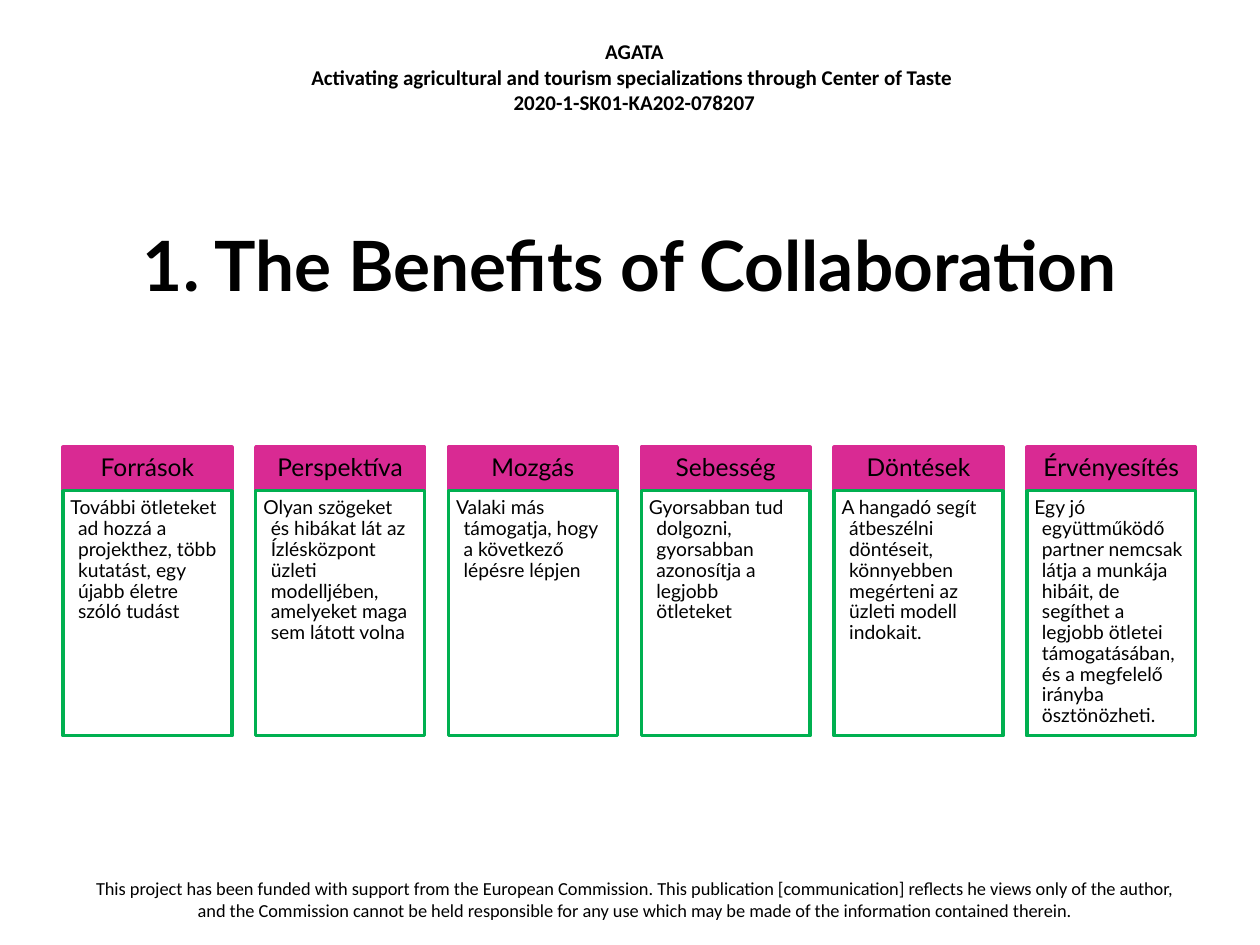
import pptx
import pptx.util
from dataclasses import dataclass
from pptx.dml.color import RGBColor
from pptx.enum.shapes import MSO_SHAPE
from pptx.enum.text import MSO_ANCHOR, PP_ALIGN
from pptx.util import Inches


@dataclass(frozen=True)
class Theme:
    text: RGBColor = RGBColor(0, 0, 0)
    accent: RGBColor = RGBColor(0xD9, 0x2A, 0x93)
    outline: RGBColor = RGBColor(0x00, 0xB0, 0x50)
    line_width: float = 2
    main_font: str = "Lato"
    frame_font: str = "Calibri"
    title_size: float = 39.6
    heading_size: float = 14
    body_size: float = 11
    header_size: float = 12
    footer_size: float = 10.5


THEME = Theme()

HEADER_LINES = [
    "AGATA",
    "Activating agricultural and tourism specializations through Center of Taste ",
    "2020-1-SK01-KA202-078207",
]
TITLE = "1. The Benefits of Collaboration"
FOOTER = (
    "This project has been funded with support from the European Commission. "
    "This publication [communication] reflects he views only of the author, "
    "and the Commission cannot be held responsible for any use which may be made "
    "of the information contained therein."
)
BENEFITS = [
    ("Források", "További ötleteket ad hozzá a projekthez, több kutatást, "
                 "egy újabb életre szóló tudást"),
    ("Perspektíva", "Olyan szögeket és hibákat lát az Ízlésközpont üzleti "
                    "modelljében, amelyeket maga sem látott volna"),
    ("Mozgás", "Valaki más támogatja, hogy a következő lépésre lépjen"),
    ("Sebesség", "Gyorsabban tud dolgozni, gyorsabban azonosítja a legjobb ötleteket"),
    ("Döntések", "A hangadó segít átbeszélni döntéseit, könnyebben megérteni "
                 "az üzleti modell indokait."),
    ("Érvényesítés", "Egy jó együttműködő partner nemcsak látja a munkája hibáit, "
                     "de segíthet a legjobb ötletei támogatásában, és a megfelelő "
                     "irányba ösztönözheti."),
]


def apply(target, formats):
    for name, value in formats.items():
        setattr(target, name, value)


def write(shape, lines, font, frame=None, paragraph_format=None):
    """Fill a shape with one paragraph per line."""
    text_frame = shape.text_frame
    apply(text_frame, {"word_wrap": True, **(frame or {})})
    for index, line in enumerate(lines):
        paragraph = text_frame.paragraphs[0] if index == 0 else text_frame.add_paragraph()
        apply(paragraph, {"alignment": PP_ALIGN.CENTER, **(paragraph_format or {})})
        run = paragraph.add_run()
        run.text = line
        apply(run.font, {**font, "size": pptx.util.Pt(font["size"])})
        run.font.color.rgb = THEME.text
    return text_frame


def add_text(slide, box, lines, font, frame=None):
    text_box = slide.shapes.add_textbox(*map(Inches, box))
    write(text_box, lines, font, frame)


def add_panel(slide, box, line_color, fill_color=None):
    panel = slide.shapes.add_shape(MSO_SHAPE.RECTANGLE, *map(Inches, box))
    panel.shadow.inherit = False
    if fill_color is None:
        panel.fill.background()
    else:
        panel.fill.solid()
        panel.fill.fore_color.rgb = fill_color
    panel.line.color.rgb = line_color
    panel.line.width = pptx.util.Pt(THEME.line_width)
    return panel


def margins(left, top, right, bottom):
    return {
        "margin_left": Inches(left),
        "margin_top": Inches(top),
        "margin_right": Inches(right),
        "margin_bottom": Inches(bottom),
    }


def add_benefit(slide, box, heading, body):
    """A filled heading above an outlined body."""
    left, top, width, height = box
    heading_height = 0.345

    heading_panel = add_panel(
        slide, (left, top, width, heading_height), THEME.accent, THEME.accent)
    write(heading_panel, [heading],
          {"name": THEME.main_font, "size": THEME.heading_size},
          {"vertical_anchor": MSO_ANCHOR.MIDDLE, **margins(0.11, 0.06, 0.11, 0.06)},
          {"line_spacing": 0.9})

    body_panel = add_panel(
        slide, (left, top + heading_height, width, height - heading_height), THEME.outline)
    text_frame = write(
        body_panel, [body],
        {"name": THEME.main_font, "size": THEME.body_size},
        {"vertical_anchor": MSO_ANCHOR.TOP, **margins(0.06, 0.06, 0.09, 0.1)},
        {"alignment": PP_ALIGN.LEFT, "line_spacing": 0.9, "level": 1})
    # Hanging indent
    properties = text_frame.paragraphs[0]._p.get_or_add_pPr()
    properties.set("marL", str(Inches(0.06)))
    properties.set("indent", str(Inches(-0.06)))


def add_benefits(slide, box):
    """Equal columns across the box."""
    left, top, width, height = box
    column_width = 1.34
    pitch = (width - column_width) / (len(BENEFITS) - 1)
    for index, (heading, body) in enumerate(BENEFITS):
        add_benefit(slide, (left + index * pitch, top, column_width, height), heading, body)


def main():
    presentation = pptx.Presentation()
    presentation.slide_width = Inches(10)
    presentation.slide_height = Inches(7.5)
    slide = presentation.slides.add_slide(presentation.slide_layouts[6])

    # Project header and funding note
    add_text(slide, (2.08, 0.26, 5.91, 0.71), HEADER_LINES,
             {"name": THEME.frame_font, "size": THEME.header_size, "bold": True})
    add_text(slide, (0.54, 6.91, 9, 0.47), [FOOTER],
             {"name": THEME.frame_font, "size": THEME.footer_size})

    # Title
    add_text(slide, (0.5, 1.47, 9, 1.25), [TITLE],
             {"name": THEME.main_font, "size": THEME.title_size, "bold": True},
             {"vertical_anchor": MSO_ANCHOR.MIDDLE})

    # Benefit columns
    add_benefits(slide, (0.5, 3.55, 8.99, 2.29))

    presentation.save("out.pptx")


if __name__ == "__main__":
    main()
